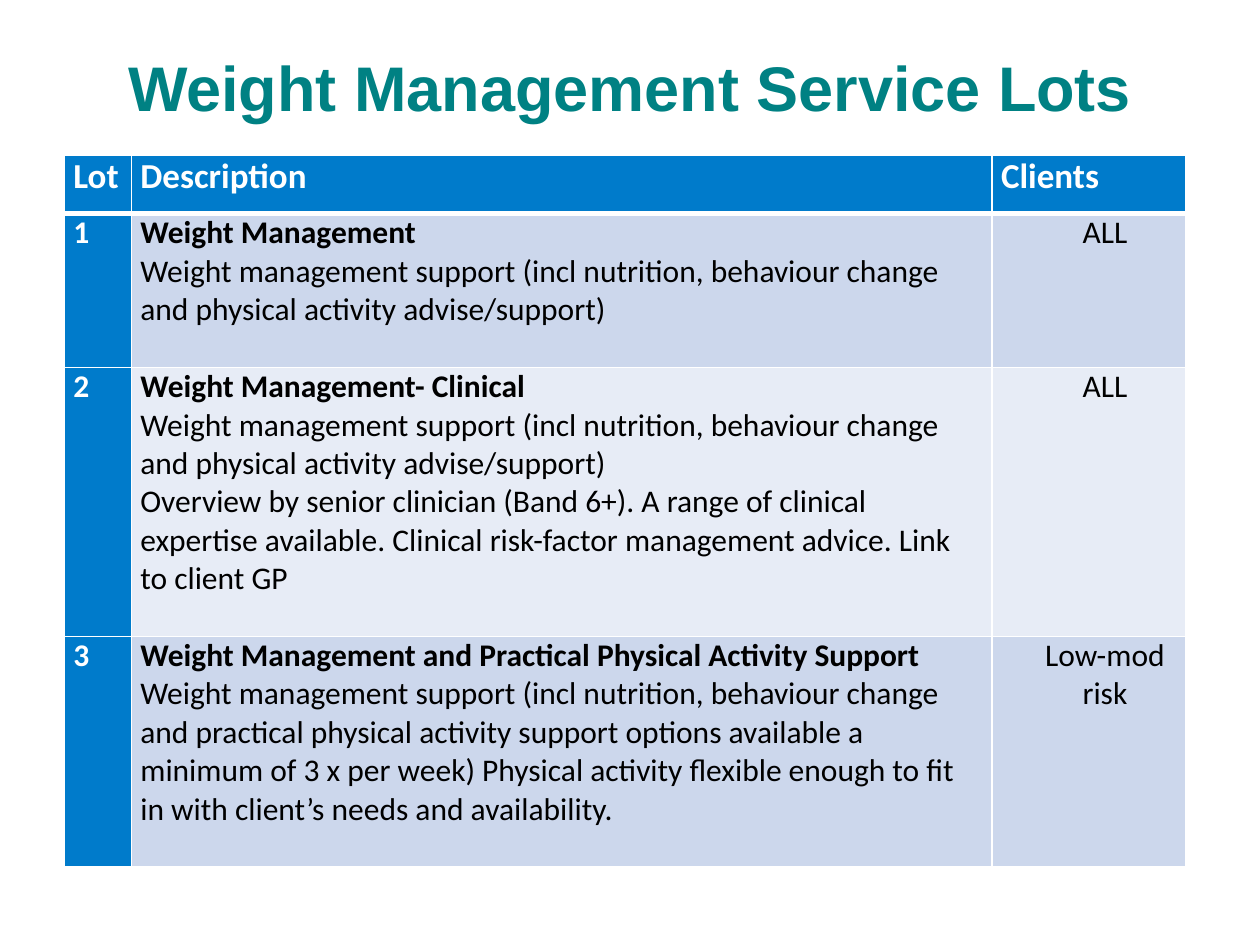
import dataclasses

import lxml.etree
import pptx
import pptx.dml.color
import pptx.enum.text
import pptx.oxml.ns
import pptx.util

Cm, Pt = pptx.util.Cm, pptx.util.Pt
ALIGN = pptx.enum.text.PP_ALIGN
ANCHOR = pptx.enum.text.MSO_ANCHOR

COLOURS = {
    "title": "008183",
    "header": "007BCB",
    "odd": "CCD7EC",
    "even": "E7ECF6",
    "light": "FFFFFF",
    "dark": "000000",
}
COLUMN_WIDTHS = (1.35, 17.35, 3.91)
HEADER_HEIGHT = 1.19
HEADINGS = ("Lot", "Description", "Clients")
CELL_FORMAT = {
    "margin_left": Cm(0.18),
    "margin_right": Cm(0.18),
    "margin_top": 0,
    "margin_bottom": 0,
    "vertical_anchor": ANCHOR.TOP,
}
SUPPORT = ("Weight management support (incl nutrition, behaviour change "
           "and physical activity advise/support)")


@dataclasses.dataclass
class Lot:
    name: str
    details: tuple[str, ...]
    clients: tuple[str, ...]
    height: float


@dataclasses.dataclass
class Line:
    text: str
    colour: str = "dark"
    bold: bool = False
    size: int = 18
    font: str = "Calibri"
    align: ALIGN = ALIGN.LEFT
    indent: float = 0


LOTS = (
    Lot("Weight Management", (SUPPORT,), ("ALL",), 3.1),
    Lot("Weight Management- Clinical",
        (SUPPORT,
         "Overview by senior clinician (Band 6+). A range of clinical expertise "
         "available. Clinical risk-factor management advice. Link to client GP"),
        ("ALL",), 5.42),
    Lot("Weight Management and Practical Physical Activity Support",
        ("Weight management support (incl nutrition, behaviour change and "
         "practical physical activity support options available a minimum of "
         "3 x per week) Physical activity flexible enough to fit in with "
         "client’s needs and availability.",),
        ("Low-mod", "risk"), 4.64),
)


def rgb(name: str) -> pptx.dml.color.RGBColor:
    return pptx.dml.color.RGBColor.from_string(COLOURS[name])


def write_lines(frame, lines: list[Line]) -> None:
    for index, line in enumerate(lines):
        para = frame.add_paragraph() if index else frame.paragraphs[0]
        para.alignment = line.align
        if line.indent:
            para._p.get_or_add_pPr().set("marL", str(Cm(line.indent)))
        span = para.add_run()
        span.text = line.text
        font_format = {"name": line.font, "size": Pt(line.size), "bold": line.bold}
        for key, value in font_format.items():
            setattr(span.font, key, value)
        span.font.color.rgb = rgb(line.colour)


def set_borders(cell, top: float, bottom: float) -> None:
    """Draw white borders, with top and bottom widths in points."""
    properties = cell._tc.get_or_add_tcPr()
    qn = pptx.oxml.ns.qn
    widths = {"a:lnL": 1, "a:lnR": 1, "a:lnT": top, "a:lnB": bottom}
    for index, (tag, width) in enumerate(widths.items()):
        border = lxml.etree.Element(qn(tag), w=str(Pt(width)))
        fill = lxml.etree.SubElement(border, qn("a:solidFill"))
        lxml.etree.SubElement(fill, qn("a:srgbClr"), val=COLOURS["light"])
        properties.insert(index, border)


def fill_cell(cell, lines: list[Line], fill: str, top: float = 1, bottom: float = 1) -> None:
    for key, value in CELL_FORMAT.items():
        setattr(cell, key, value)
    cell.fill.solid()
    cell.fill.fore_color.rgb = rgb(fill)
    set_borders(cell, top, bottom)
    write_lines(cell.text_frame, lines)


def add_title(page) -> None:
    box = page.shapes.title
    place = {"left": Cm(1.27), "top": Cm(0.76), "width": Cm(22.86), "height": Cm(1.96)}
    for key, value in place.items():
        setattr(box, key, value)
    box.text_frame.vertical_anchor = ANCHOR.MIDDLE
    write_lines(box.text_frame, [Line("Weight Management Service Lots", "title",
                                      True, 36, "Arial", ALIGN.CENTER)])


def add_lot_table(page) -> None:
    heights = [HEADER_HEIGHT] + [lot.height for lot in LOTS]
    table = page.shapes.add_table(
        len(heights), len(COLUMN_WIDTHS), Cm(1.3), Cm(3.12),
        Cm(sum(COLUMN_WIDTHS)), Cm(sum(heights))).table
    for column, width in zip(table.columns, COLUMN_WIDTHS):
        column.width = Cm(width)
    for row, height in zip(table.rows, heights):
        row.height = Cm(height)

    for index, heading in enumerate(HEADINGS):
        fill_cell(table.cell(0, index), [Line(heading, "light", True, 20)],
                  "header", bottom=3)
    for number, lot in enumerate(LOTS, start=1):
        band = "odd" if number % 2 else "even"
        contents = (
            ([Line(str(number), "light", True)], "header"),
            ([Line(lot.name, bold=True)] + [Line(text) for text in lot.details], band),
            ([Line(text, align=ALIGN.CENTER, indent=0.64) for text in lot.clients], band),
        )
        for index, (lines, fill) in enumerate(contents):
            fill_cell(table.cell(number, index), lines, fill,
                      top=3 if number == 1 else 1)


def main() -> None:
    deck = pptx.Presentation()
    deck.slide_width, deck.slide_height = Cm(25.4), Cm(19.05)
    page = deck.slides.add_slide(deck.slide_layouts.get_by_name("Title Only"))
    add_title(page)
    add_lot_table(page)
    deck.save("out.pptx")


if __name__ == "__main__":
    main()
